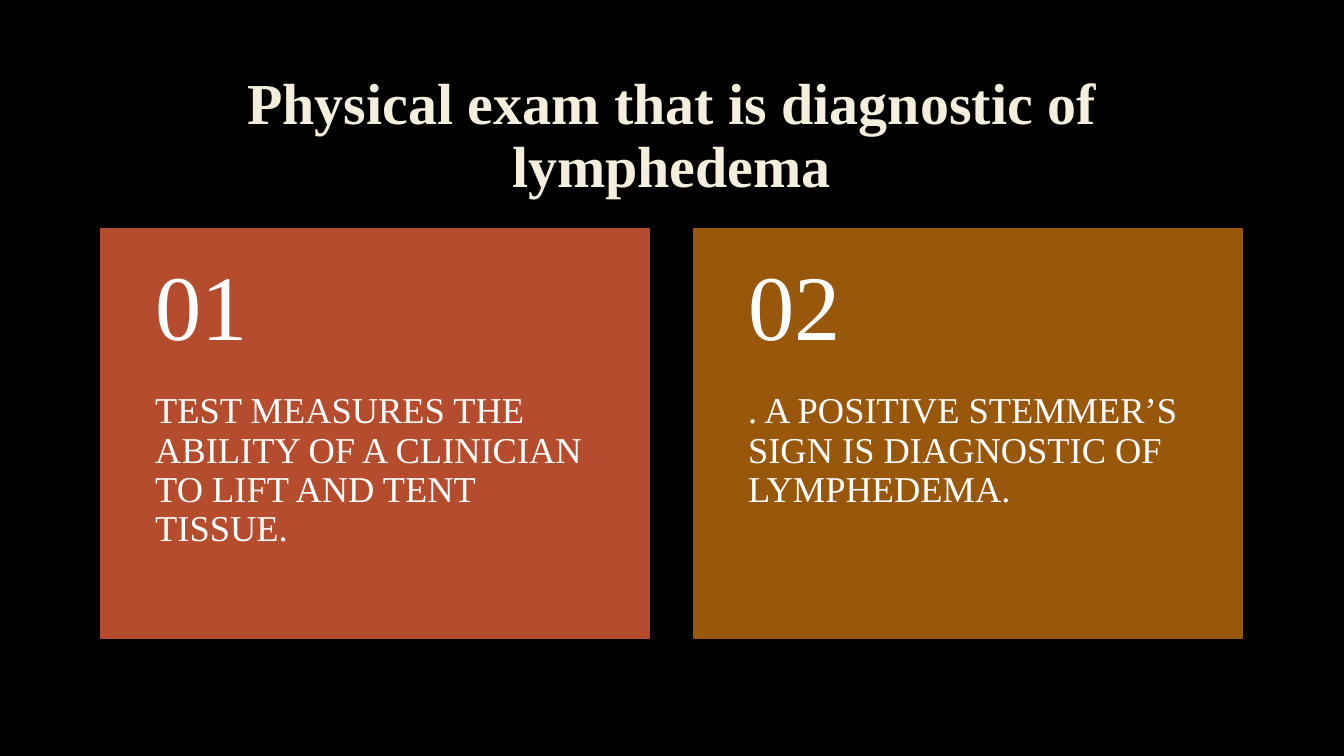
from dataclasses import dataclass

from pptx import Presentation
from pptx.dml.color import RGBColor
from pptx.enum.shapes import MSO_SHAPE as Shape
from pptx.enum.text import MSO_ANCHOR as Anchor, PP_ALIGN as Align
from pptx.util import Inches, Pt

FONT = "Times New Roman"
LEFT, TOP = 1, 2.27
CARD_W, CARD_H = 5.44, 4.06
COLUMN_STEP = 5.88
NUMBER_H = CARD_H * 0.4


@dataclass(frozen=True)
class Card:
    """A numbered finding on a coloured panel."""

    number: str
    text: str
    color: str


CARDS = [
    Card("01", "TEST MEASURES THE ABILITY OF A CLINICIAN TO LIFT AND TENT TISSUE.", "B54C2D"),
    Card("02", ". A POSITIVE STEMMER’S SIGN IS DIAGNOSTIC OF LYMPHEDEMA.", "99570C"),
]


def rgb(value: str) -> RGBColor:
    """Turn a hex string into a colour."""
    return RGBColor.from_string(value)


def add_text(s, box: tuple, text: str, size: float, color: str = "FFFFFF",
             bold: bool = False, align=Align.LEFT, anchor=Anchor.TOP,
             margins: tuple = (0.1, 0.05, 0.1, 0.05)) -> None:
    """Add a wrapped text box; margins run left, top, right, bottom."""
    tf = s.shapes.add_textbox(*map(Inches, box)).text_frame
    tf.word_wrap = True
    tf.vertical_anchor = anchor
    tf.margin_left, tf.margin_top, tf.margin_right, tf.margin_bottom = map(Inches, margins)
    p = tf.paragraphs[0]
    p.alignment = align
    p.line_spacing = 0.9
    r = p.add_run()
    r.text = text
    r.font.name = FONT
    r.font.size = Pt(size)
    r.font.bold = bold
    r.font.color.rgb = rgb(color)


def add_card(s, column: int, card: Card) -> None:
    """Draw a card's panel, text and number in its column."""
    x = LEFT + column * COLUMN_STEP
    sp = s.shapes.add_shape(Shape.RECTANGLE, *map(Inches, (x, TOP, CARD_W, CARD_H)))
    sp.shadow.inherit = False
    sp.fill.solid()
    sp.fill.fore_color.rgb = rgb(card.color)
    sp.line.color.rgb = rgb(card.color)
    sp.line.width = Pt(1.25)
    add_text(s, (x, TOP + NUMBER_H, CARD_W, CARD_H - NUMBER_H), card.text, 26,
             margins=(0.54, 0, 0.54, 0.36))
    add_text(s, (x, TOP, CARD_W, NUMBER_H), card.number, 66, anchor=Anchor.MIDDLE,
             margins=(0.54, 0.18, 0.54, 0.18))


def main() -> None:
    """Build and save the slide."""
    prs = Presentation()
    prs.slide_width, prs.slide_height = Inches(13.33), Inches(7.5)
    s = prs.slides.add_slide(prs.slide_layouts[6])
    s.background.fill.solid()
    s.background.fill.fore_color.rgb = rgb("000000")
    add_text(s, (LEFT, 0.67, 11.32, 1.38), "Physical exam that is diagnostic of lymphedema",
             41.4, "F4EEDC", bold=True, align=Align.CENTER, anchor=Anchor.MIDDLE)
    for column, card in enumerate(CARDS):
        add_card(s, column, card)
    prs.save("out.pptx")


if __name__ == "__main__":
    main()
